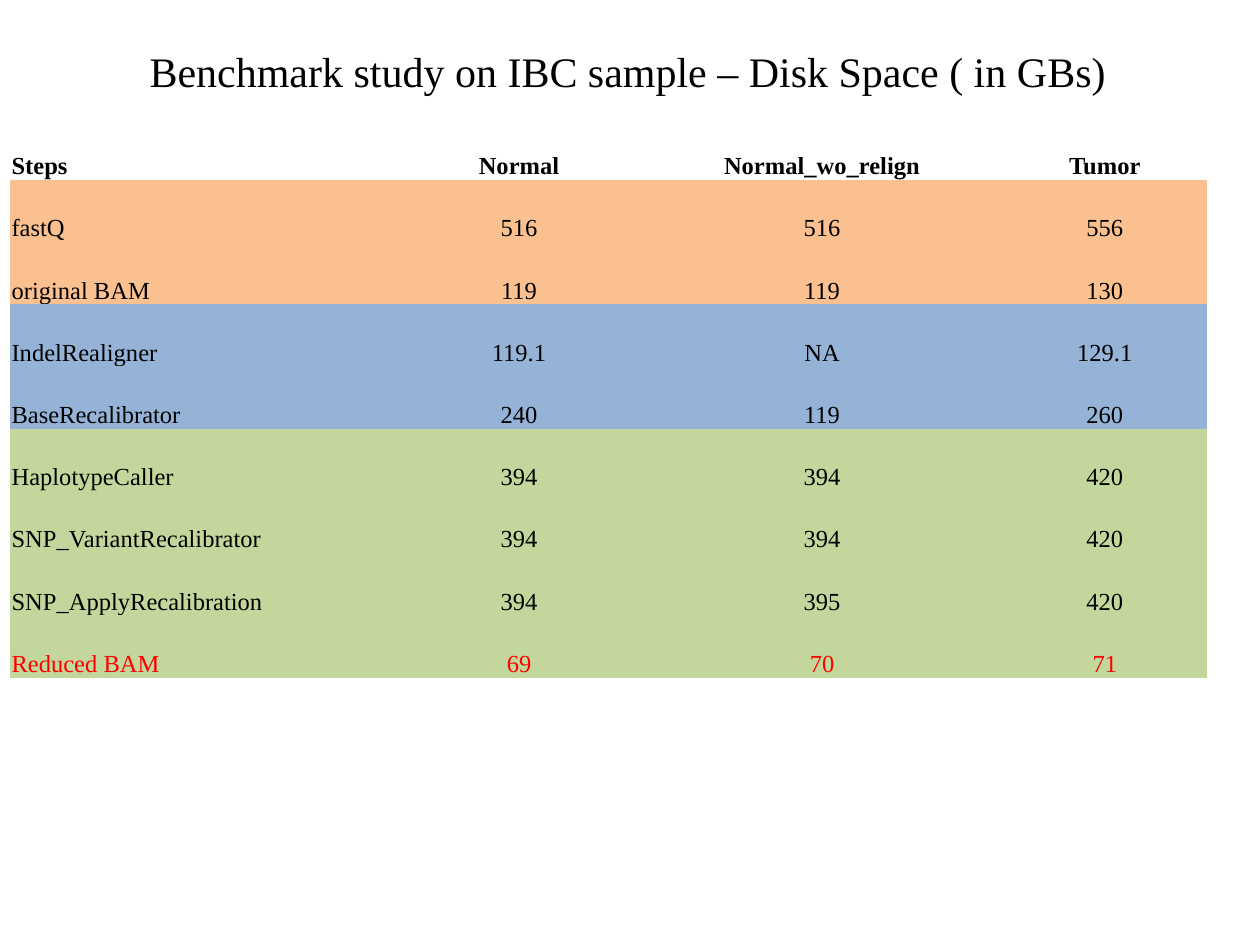
from dataclasses import dataclass

from pptx import Presentation
from pptx.dml.color import RGBColor
from pptx.enum.text import MSO_ANCHOR, PP_ALIGN
from pptx.util import Pt

LEFT = PP_ALIGN.LEFT
CENTER = PP_ALIGN.CENTER
BOTTOM = MSO_ANCHOR.BOTTOM

FONT = "Times New Roman"
PLAIN_TABLE_STYLE = "{2D5ABB26-0587-4C30-8999-92F81FD0307C}"
COLORS = {
    "black": "000000",
    "red": "FF0000",
    "orange": "FAC090",
    "blue": "95B3D7",
    "green": "C3D69B",
}


@dataclass(frozen=True)
class Step:
    values: tuple[str, ...]
    fill: str | None
    color: str = "black"
    bold: bool = False


STEPS = (
    Step(("Steps", "Normal", "Normal_wo_relign", "Tumor"), None, bold=True),
    Step(("fastQ", "516", "516", "556"), "orange"),
    Step(("original BAM", "119", "119", "130"), "orange"),
    Step(("IndelRealigner", "119.1", "NA", "129.1"), "blue"),
    Step(("BaseRecalibrator", "240", "119", "260"), "blue"),
    Step(("HaplotypeCaller", "394", "394", "420"), "green"),
    Step(("SNP_VariantRecalibrator", "394", "394", "420"), "green"),
    Step(("SNP_ApplyRecalibration", "394", "395", "420"), "green"),
    Step(("Reduced BAM", "69", "70", "71"), "green", color="red"),
)
COLUMN_WIDTHS = (221, 139.7, 206.6, 116.6)
ROW_HEIGHT = 35.57


def write_text(text_frame, text: str, *, size: float, color: str = "black",
               bold: bool = False, alignment=CENTER) -> None:
    paragraph = text_frame.paragraphs[0]
    paragraph.alignment = alignment
    run = paragraph.add_run()
    run.text = text
    run.font.name = FONT
    run.font.size = Pt(size)
    run.font.bold = bold
    run.font.color.rgb = RGBColor.from_string(COLORS[color])


def add_title(slide, text: str) -> None:
    shape = slide.shapes.add_textbox(Pt(20), Pt(22.5), Pt(677.5), Pt(36))
    shape.text_frame.word_wrap = True
    write_text(shape.text_frame, text, size=24)


def fill_cell(cell, text: str, step: Step, alignment) -> None:
    cell.margin_left = cell.margin_right = cell.margin_top = Pt(0.9)
    cell.margin_bottom = Pt(0)
    cell.vertical_anchor = BOTTOM
    if step.fill is None:
        cell.fill.background()
    else:
        cell.fill.solid()
        cell.fill.fore_color.rgb = RGBColor.from_string(COLORS[step.fill])
    write_text(cell.text_frame, text, size=14, color=step.color,
               bold=step.bold, alignment=alignment)


def add_disk_space_table(slide, steps: tuple[Step, ...]) -> None:
    table = slide.shapes.add_table(
        len(steps), len(COLUMN_WIDTHS), Pt(5.75), Pt(67.25),
        Pt(sum(COLUMN_WIDTHS)), Pt(ROW_HEIGHT * len(steps)),
    ).table
    table.horz_banding = False
    table._tbl.tblPr[0].text = PLAIN_TABLE_STYLE
    for column, width in zip(table.columns, COLUMN_WIDTHS):
        column.width = Pt(width)
    for row, step in zip(table.rows, steps):
        row.height = Pt(ROW_HEIGHT)
        for index, (cell, text) in enumerate(zip(row.cells, step.values)):
            fill_cell(cell, text, step, CENTER if index else LEFT)


def main() -> None:
    presentation = Presentation()
    presentation.slide_width = Pt(720)
    presentation.slide_height = Pt(540)
    slide = presentation.slides.add_slide(presentation.slide_layouts[6])
    add_disk_space_table(slide, STEPS)
    add_title(slide, "Benchmark study on IBC sample – Disk Space ( in GBs)")
    presentation.save("out.pptx")


if __name__ == "__main__":
    main()
